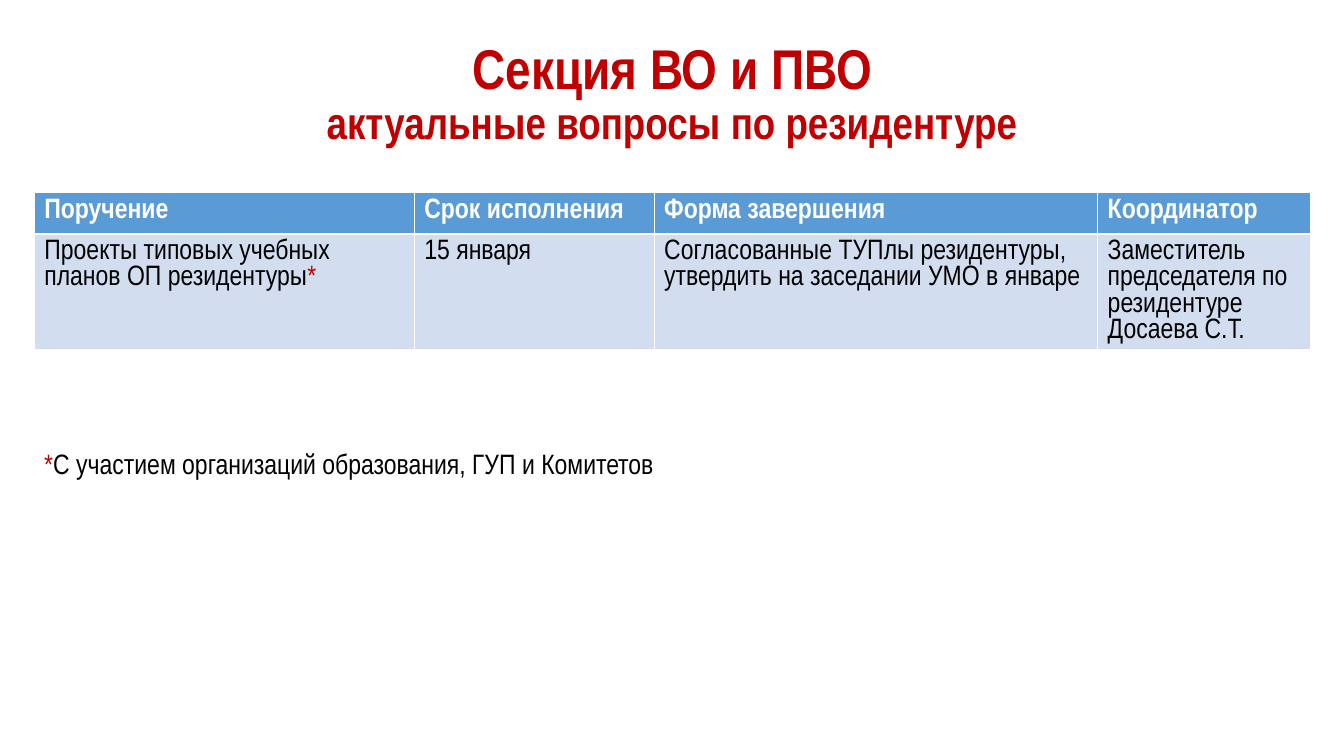
from pptx import Presentation
from pptx.dml.color import RGBColor
from pptx.enum.text import MSO_ANCHOR, MSO_AUTO_SIZE, PP_ALIGN
from pptx.util import Inches, Pt

MIDDLE, CENTER = MSO_ANCHOR.MIDDLE, PP_ALIGN.CENTER
GROW = MSO_AUTO_SIZE.SHAPE_TO_FIT_TEXT

RED = RGBColor(0xC0, 0x00, 0x00)
BLACK = RGBColor(0x00, 0x00, 0x00)
WHITE = RGBColor(0xFF, 0xFF, 0xFF)
BLUE = RGBColor(0x5B, 0x9B, 0xD5)
PALE = RGBColor(0xD2, 0xDE, 0xEF)

WIDE, HIGH = Inches(13.33), Inches(7.5)
GRID = 40  # columns and rows on the slide

BODY = {"name": "Arial Narrow", "size": Pt(20), "bold": False}
HEAD = {**BODY, "bold": True}
TITLE = {**HEAD, "size": Pt(40)}
SUB = {**HEAD, "size": Pt(32)}


class Page:
    """Holds the text style and the current slide."""

    def __init__(self, deck):
        self.slide = deck.slides.add_slide(deck.slide_layouts[5])

    def col(self, n):
        return round(WIDE * n / GRID)

    def row(self, n):
        return round(HIGH * n / GRID)

    def box(self, x, y, w, h):
        return self.col(x), self.row(y), self.col(w), self.row(h)

    def add_text(self, para, text, style, color):
        run = para.add_run()
        run.text = text
        for key, value in style.items():
            setattr(run.font, key, value)
        run.font.color.rgb = color

    def title(self, area, lines):
        shape = self.slide.shapes.title
        shape.left, shape.top, shape.width, shape.height = self.box(*area)
        frame = shape.text_frame
        frame.vertical_anchor = MIDDLE
        para = frame.paragraphs[0]
        para.alignment, para.line_spacing = CENTER, 0.9
        for i, (text, style) in enumerate(lines):
            if i:
                para.add_line_break()
            self.add_text(para, text, style, RED)

    def table(self, x, y, cols, rows, data):
        area = self.box(x, y, sum(cols), sum(rows))
        grid = self.slide.shapes.add_table(len(rows), len(cols), *area).table
        for part, size in zip(grid.columns, cols):
            part.width = self.col(size)
        for part, size in zip(grid.rows, rows):
            part.height = self.row(size)
        for r, line in enumerate(data):
            style, color, fill = (BODY, BLACK, PALE) if r else (HEAD, WHITE, BLUE)
            for c, text in enumerate(line):
                cell = grid.cell(r, c)
                cell.fill.solid()
                cell.fill.fore_color.rgb = fill
                self.starred(cell.text_frame, text, style, color)

    def note(self, area, text):
        frame = self.slide.shapes.add_textbox(*self.box(*area)).text_frame
        frame.word_wrap = True
        frame.auto_size = GROW
        self.starred(frame, text, BODY, BLACK)

    def starred(self, frame, text, style, color):
        """Add text with its footnote star in red."""
        before, star, after = text.partition("*")
        for part, tint in ((before, color), (star, RED), (after, color)):
            if part:
                self.add_text(frame.paragraphs[0], part, style, tint)


def main():
    deck = Presentation()
    deck.slide_width, deck.slide_height = WIDE, HIGH
    page = Page(deck)

    # Heading
    page.title((2.76, 2.13, 34.5, 5.81), [
        ("Секция ВО и ПВО", TITLE),
        ("актуальные вопросы по резидентуре", SUB),
    ])

    # Assignments
    page.table(1.02, 10.19, (11.31, 7.14, 13.2, 6.33), (2.19, 6.08), [
        ("Поручение", "Срок исполнения", "Форма завершения", "Координатор"),
        ("Проекты типовых учебных планов ОП резидентуры*",
         "15 января",
         "Согласованные ТУПлы резидентуры, утвердить на заседании УМО в январе",
         "Заместитель председателя по резидентуре Досаева С.Т."),
    ])

    # Footnote
    page.note((1.02, 23.36, 37.96, 2.35),
              "*С участием организаций образования, ГУП и Комитетов")

    deck.save("out.pptx")


if __name__ == "__main__":
    main()
